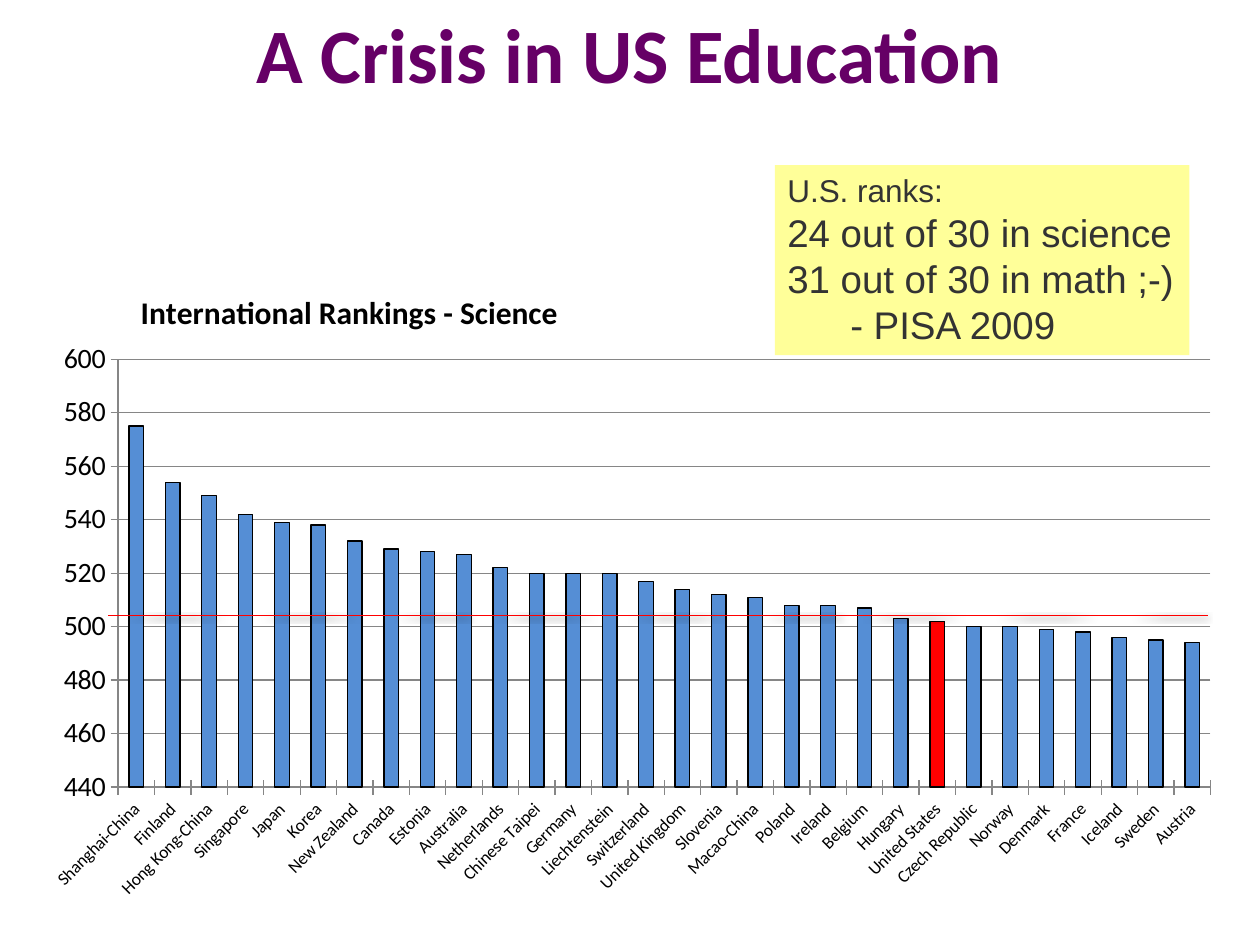
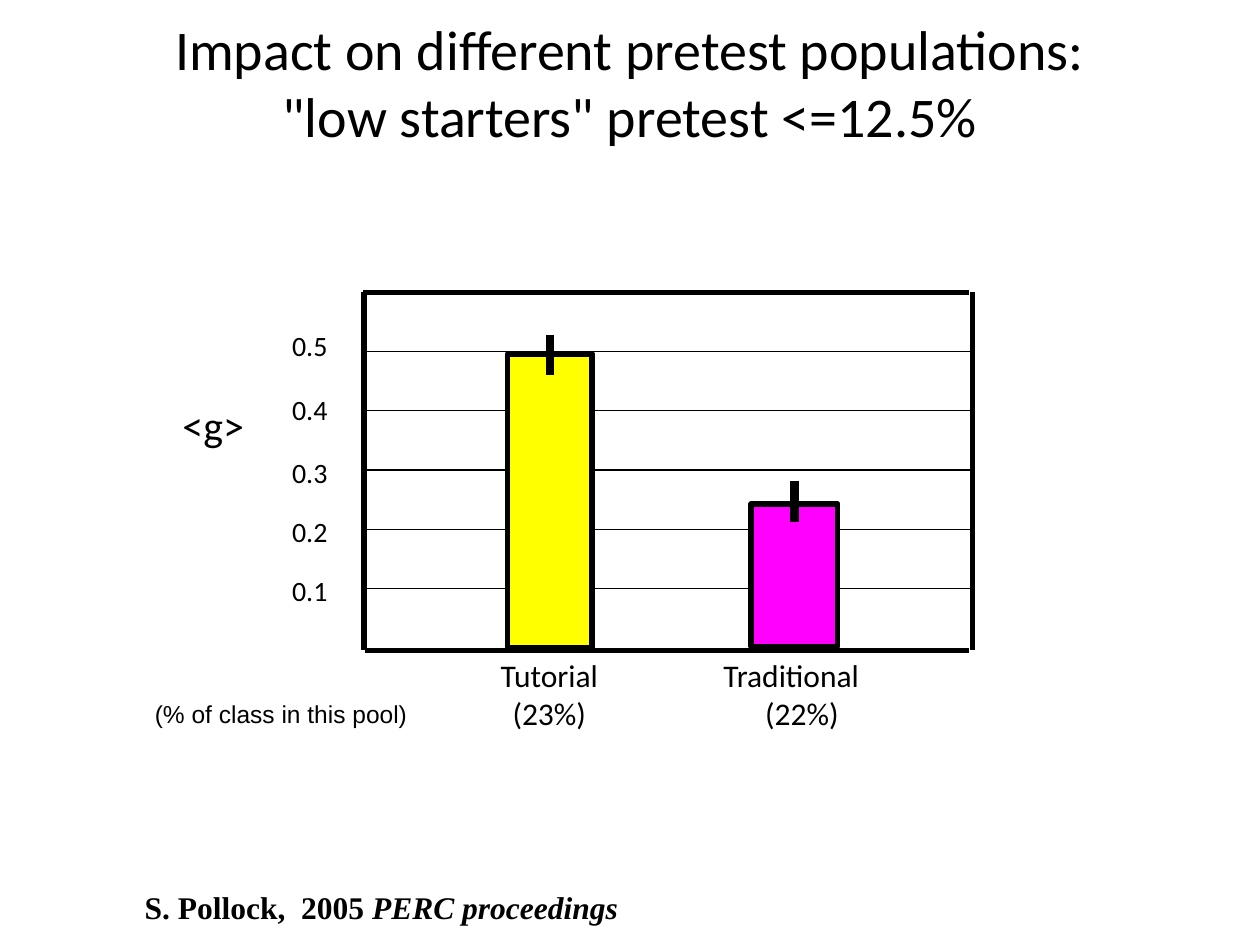
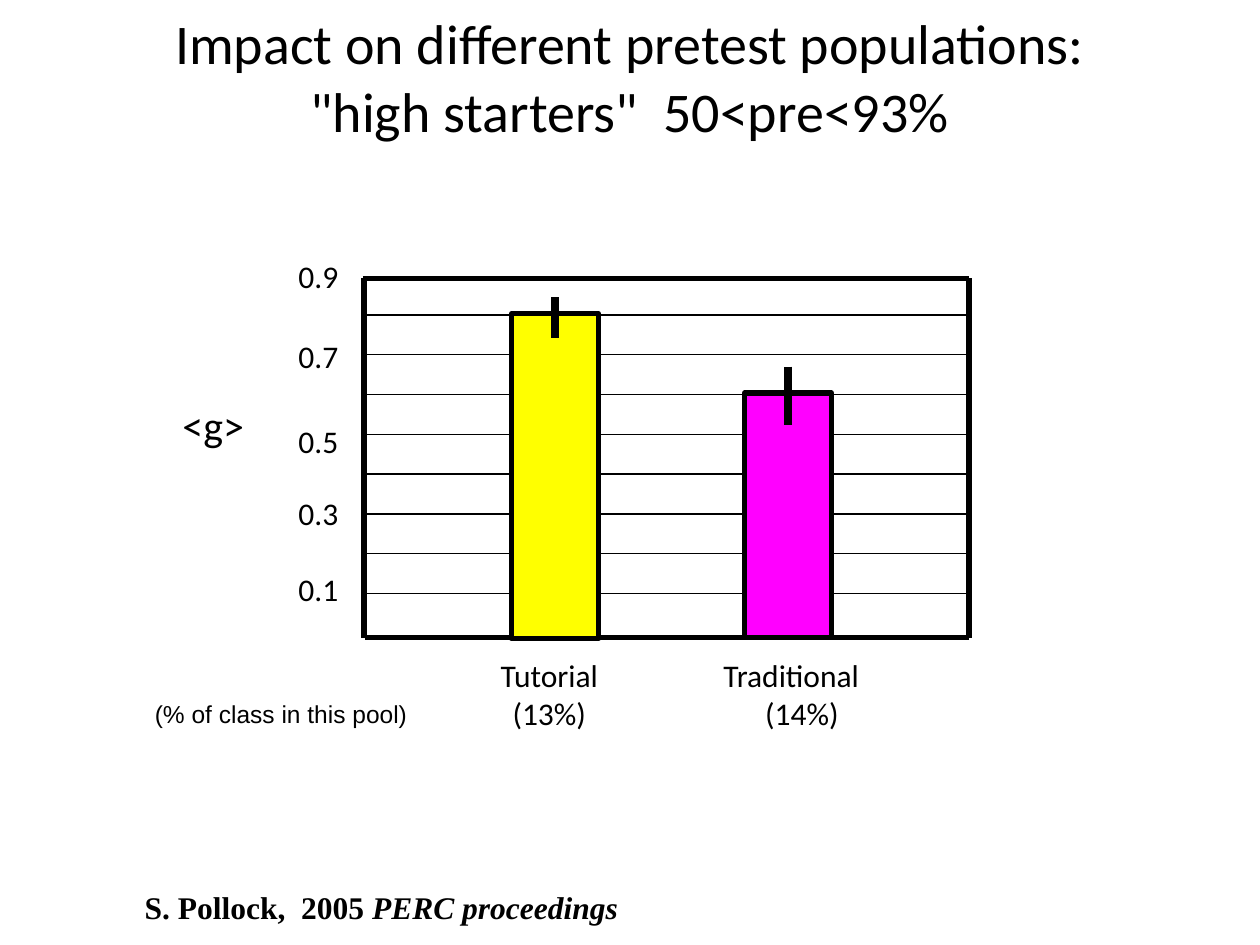
"""Build three slides on education rankings and tutorial learning gains."""
from lxml import etree
from pptx import Presentation
from pptx.chart.data import CategoryChartData
from pptx.dml.color import RGBColor
from pptx.enum.chart import XL_CHART_TYPE as CHART, XL_TICK_MARK as TICK
from pptx.enum.dml import MSO_LINE
from pptx.enum.shapes import MSO_CONNECTOR, MSO_SHAPE as SHAPE
from pptx.enum.text import MSO_ANCHOR as ANCHOR, MSO_AUTO_SIZE as FIT, PP_ALIGN as ALIGN
from pptx.oxml.ns import qn
from pptx.util import Inches, Pt

BLACK = RGBColor(0x00, 0x00, 0x00)
PURPLE = RGBColor(0x66, 0x00, 0x66)
DARK = RGBColor(0x33, 0x33, 0x33)
GRAY = RGBColor(0x86, 0x86, 0x86)
BLUE = RGBColor(0x55, 0x8E, 0xD5)
RED = RGBColor(0xFF, 0x00, 0x00)
PALE = RGBColor(0xFF, 0xFF, 0x99)
YELLOW = RGBColor(0xFF, 0xFF, 0x00)
MAGENTA = RGBColor(0xFF, 0x00, 0xFF)


def add_line(shapes, x1, y1, x2, y2, width, color=BLACK):
    """Add a straight line without a shadow."""
    line = shapes.add_connector(MSO_CONNECTOR.STRAIGHT, Inches(x1), Inches(y1), Inches(x2), Inches(y2))
    line.line.color.rgb = color
    line.line.width = Pt(width)
    etree.SubElement(line._element.spPr, qn("a:effectLst"))
    return line


def add_text(p, text, size, font="Calibri", color=BLACK, bold=False, italic=False):
    """Add one formatted run to a paragraph."""
    r = p.add_run()
    r.text = text
    r.font.size, r.font.name, r.font.color.rgb = Pt(size), font, color
    r.font.bold, r.font.italic = bold, italic


prs = Presentation()
prs.slide_width, prs.slide_height = Inches(10), Inches(7.5)
title_only = prs.slide_layouts[5]

s = prs.slides.add_slide(title_only)
title = s.shapes.title
title.left, title.top, title.width, title.height = Inches(0), Inches(0), Inches(10), Inches(1.25)
title.text_frame.vertical_anchor = ANCHOR.TOP
add_text(title.text_frame.paragraphs[0], "A Crisis in US Education", 44, color=PURPLE, bold=True)

scores = {
    "Shanghai-China": 575, "Finland": 554, "Hong Kong-China": 549, "Singapore": 542, "Japan": 539,
    "Korea": 538, "New Zealand": 532, "Canada": 529, "Estonia": 528, "Australia": 527,
    "Netherlands": 522, "Chinese Taipei": 520, "Germany": 520, "Liechtenstein": 520,
    "Switzerland": 517, "United Kingdom": 514, "Slovenia": 512, "Macao-China": 511,
    "Poland": 508, "Ireland": 508, "Belgium": 507, "Hungary": 503, "United States": 502,
    "Czech Republic": 500, "Norway": 500, "Denmark": 499, "France": 498, "Iceland": 496,
    "Sweden": 495, "Austria": 494,
}
data = CategoryChartData()
data.categories = list(scores)
data.add_series("Series 1", list(scores.values()))
chart = s.shapes.add_chart(CHART.COLUMN_CLUSTERED, Inches(0.21), Inches(2.05),
                           Inches(9.58), Inches(5.17), data).chart
chart.has_legend = False
chart.font.name, chart.font.size, chart.font.color.rgb = "Calibri", Pt(10), BLACK
chart.has_title = True
add_text(chart.chart_title.text_frame.paragraphs[0], "International Rankings - Science", 18, bold=True)

plot = chart.plots[0]
plot.vary_by_categories = False
plot.gap_width = 150
series = plot.series[0]
us = series.points[list(scores).index("United States")]
for bar, color in ((series, BLUE), (us, RED)):
    bar.format.fill.solid()
    bar.format.fill.fore_color.rgb = color
    bar.format.line.color.rgb = BLACK
    bar.format.line.width = Pt(0.75)

values = chart.value_axis
values.minimum_scale, values.maximum_scale, values.major_unit = 440, 600, 20
values.major_gridlines.format.line.color.rgb = GRAY
for axis, size in ((values, 16), (chart.category_axis, 10)):
    axis.major_tick_mark = TICK.CROSS
    axis.format.line.color.rgb = GRAY
    axis.tick_labels.font.size = Pt(size)
chart.element.find(f".//{qn('c:catAx')}/{qn('c:txPr')}/{qn('a:bodyPr')}").set("rot", "-2700000")

for tag, index, settings in (
    ("c:title", 1, {"xMode": "edge", "yMode": "edge", "x": 0.09, "y": 0.04}),
    ("c:plotArea", 0, {"layoutTarget": "inner", "xMode": "edge", "yMode": "edge",
                       "x": 0.076, "y": 0.155, "w": 0.905, "h": 0.657}),
):
    parent = chart.element.find(f".//{qn(tag)}")
    for old in parent.findall(qn("c:layout")):
        parent.remove(old)
    layout = etree.Element(qn("c:layout"))
    manual = etree.SubElement(layout, qn("c:manualLayout"))
    for key, value in settings.items():
        etree.SubElement(manual, qn(f"c:{key}")).set("val", str(value))
    parent.insert(index, layout)

note = s.shapes.add_shape(SHAPE.RECTANGLE, Inches(6.15), Inches(1.31), Inches(3.29), Inches(1.51))
note.shadow.inherit = False
note.fill.solid()
note.fill.fore_color.rgb = PALE
note.line.fill.background()
tf = note.text_frame
tf.word_wrap, tf.auto_size, tf.vertical_anchor = False, FIT.SHAPE_TO_FIT_TEXT, ANCHOR.TOP
for i, (text, size) in enumerate((("U.S. ranks:", 18), ("24 out of 30 in science", 22),
                                  ("31 out of 30 in math ;-)", 22), ("- PISA 2009", 22))):
    p = tf.add_paragraph() if i else tf.paragraphs[0]
    p.alignment = ALIGN.LEFT
    add_text(p, text, size, "Arial", DARK)
p._p.get_or_add_pPr().set("marL", str(Inches(0.5)))

average = add_line(s.shapes, 0.86, 4.88, 9.58, 4.88, 0.25, RED)
average.line.dash_style = MSO_LINE.ROUND_DOT
shadow = etree.SubElement(average._element.spPr.find(qn("a:effectLst")), qn("a:outerShdw"),
                          blurRad=str(Pt(3.1)), dist=str(Pt(1.6)), dir="5400000", rotWithShape="0")
shade = etree.SubElement(shadow, qn("a:srgbClr"), val="000000")
etree.SubElement(shade, qn("a:alpha"), val="38000")

studies = [
    {"title": '"low starters" pretest <=12.5%', "title_top": 0.02,
     "frame": (2.32, 7.72, 5.16), "grid": (2.79, 4.67, 5),
     "bars": [(4.03, 2.81, 0.67, 2.33, YELLOW, 2.66, 2.98),
              (5.96, 4, 0.69, 1.13, MAGENTA, 3.82, 4.14)],
     "scale": (2.22, 2.56, 2.4, 16), "shares": ("(23%)", "(22%)"),
     "ticks": [("0.5", 0), ("0.4", 17), ("0.3", 17), ("0.2", 14.6), ("0.1", 14.6)]},
    {"title": '"high starters"  50<pre<93%', "title_top": -0.02,
     "frame": (2.21, 7.69, 5.06), "grid": (2.5, 4.71, 8),
     "bars": [(4.06, 2.49, 0.69, 2.58, YELLOW, 2.36, 2.68),
              (5.91, 3.12, 0.69, 1.94, MAGENTA, 2.91, 3.37)],
     "scale": (2.27, 1.99, 3.2, 18), "shares": ("(13%)", "(14%)"),
     "ticks": [("0.9", 0), ("0.7", 24.4), ("0.5", 26.8), ("0.3", 19.5), ("0.1", 22)]},
]

for study in studies:
    s = prs.slides.add_slide(title_only)
    title = s.shapes.title
    title.left, title.top = Inches(0.75), Inches(study["title_top"])
    title.width, title.height = Inches(8.5), Inches(1.25)
    p = title.text_frame.paragraphs[0]
    add_text(p, "Impact on different pretest populations:", 32)
    p.add_line_break()
    add_text(p, study["title"], 32)

    first, last, count = study["grid"]
    for i in range(count):
        y = first + (last - first) * i / (count - 1)
        add_line(s.shapes, 2.89, y, 7.7, y, 0.75)

    top, right, bottom = study["frame"]
    for ends in ((2.89, top, 2.89, bottom), (right, top, right, bottom),
                 (2.88, top, 7.69, top), (2.9, bottom, 7.69, bottom)):
        add_line(s.shapes, *ends, 3)

    for x, y, w, h, color, high, low in study["bars"]:
        group = s.shapes.add_group_shape()
        bar = group.shapes.add_shape(SHAPE.RECTANGLE, Inches(x), Inches(y), Inches(w), Inches(h))
        bar.shadow.inherit = False
        bar.fill.solid()
        bar.fill.fore_color.rgb = color
        bar.line.color.rgb = BLACK
        bar.line.width = Pt(3)
        add_line(group.shapes, x + w / 2, high, x + w / 2, low, 5)

    x, y, h, size = study["scale"]
    tf = s.shapes.add_textbox(Inches(x), Inches(y), Inches(0.76), Inches(h)).text_frame
    tf.word_wrap = True
    for i, (tick, gap) in enumerate(study["ticks"]):
        p = tf.add_paragraph() if i else tf.paragraphs[0]
        if gap:
            p.space_before = Pt(gap)
        add_text(p, tick, size)

    for name, share, x, w, indent in zip(("Tutorial", "Traditional"), study["shares"],
                                         (3.61, 5.63), (1.5, 1.3), (0, 0.17)):
        tf = s.shapes.add_textbox(Inches(x), Inches(5.16), Inches(w), Inches(0.71)).text_frame
        tf.word_wrap = True
        add_text(tf.paragraphs[0], name, 18)
        add_text(tf.add_paragraph(), share, 18)
        for p in tf.paragraphs:
            p.alignment = ALIGN.CENTER
        p._p.get_or_add_pPr().set("marL", str(Inches(indent)))

    for x, y, w, h, runs in (
        (1.35, 3.12, 0.7, 0.5, [("<g>", 24)]),
        (1.13, 5.5, 2.81, 0.33, [("(% of class in this pool)", 14, "Arial")]),
        (1.05, 7, 3.96, 0.4, [("S. Pollock,  2005 ", 18, "Times New Roman", BLACK, True),
                              ("PERC proceedings", 18, "Times New Roman", BLACK, True, True)]),
    ):
        tf = s.shapes.add_textbox(Inches(x), Inches(y), Inches(w), Inches(h)).text_frame
        tf.word_wrap = False
        for run in runs:
            add_text(tf.paragraphs[0], *run)

prs.save("out.pptx")
